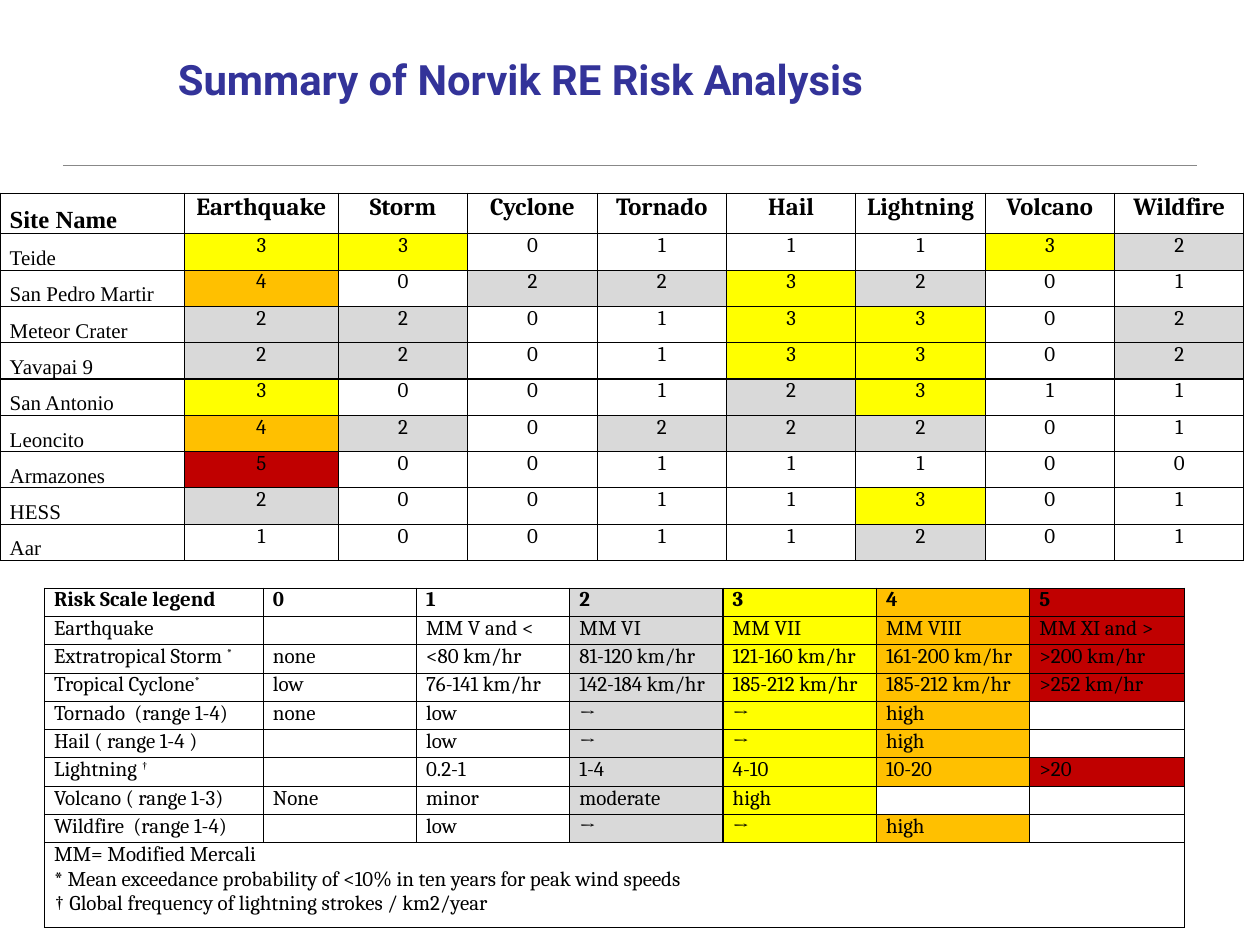
from lxml.etree import SubElement
from pptx import Presentation
from pptx.dml.color import RGBColor
from pptx.enum.shapes import MSO_CONNECTOR
from pptx.enum.text import MSO_ANCHOR, PP_ALIGN
from pptx.oxml.ns import qn
from pptx.util import Inches, Pt

BLACK = RGBColor(0x00, 0x00, 0x00)
NAVY = RGBColor(0x33, 0x33, 0x99)
GRAY = RGBColor(0x88, 0x88, 0x88)
RISK_FILLS = {
    2: RGBColor(0xD9, 0xD9, 0xD9),
    3: RGBColor(0xFF, 0xFF, 0x00),
    4: RGBColor(0xFF, 0xC0, 0x00),
    5: RGBColor(0xC0, 0x00, 0x00),
}

HAZARDS = ["Earthquake", "Storm", "Cyclone", "Tornado", "Hail",
           "Lightning", "Volcano", "Wildfire"]
SITES = {
    "Teide": (3, 3, 0, 1, 1, 1, 3, 2),
    "San Pedro Martir": (4, 0, 2, 2, 3, 2, 0, 1),
    "Meteor Crater": (2, 2, 0, 1, 3, 3, 0, 2),
    "Yavapai 9": (2, 2, 0, 1, 3, 3, 0, 2),
    "San Antonio": (3, 0, 0, 1, 2, 3, 1, 1),
    "Leoncito": (4, 2, 0, 2, 2, 2, 0, 1),
    "Armazones": (5, 0, 0, 1, 1, 1, 0, 0),
    "HESS": (2, 0, 0, 1, 1, 3, 0, 1),
    "Aar": (1, 0, 0, 1, 1, 2, 0, 1),
}
# A caret starts a superscript
LEGEND = [
    ["Risk Scale legend", "0", "1", "2", "3", "4", "5"],
    ["Earthquake", "", "MM V and <", "MM VI", "MM VII", "MM VIII", "MM XI and >"],
    ["Extratropical Storm ^*", "none", "<80 km/hr", "81-120 km/hr",
     "121-160 km/hr", "161-200 km/hr", ">200 km/hr"],
    ["Tropical Cyclone^*", "low", "76-141 km/hr", "142-184 km/hr",
     "185-212 km/hr", "185-212 km/hr", ">252 km/hr"],
    ["Tornado  (range 1-4)", "none", "low", "→", "→", "high", ""],
    ["Hail ( range 1-4 )", "", "low", "→", "→", "high", ""],
    ["Lightning ^†", "", "0.2-1", "1-4", "4-10", "10-20", ">20"],
    ["Volcano ( range 1-3)", "None", "minor", "moderate", "high", "", ""],
    ["Wildfire  (range 1-4)", "", "low", "→", "→", "high", ""],
]
NOTES = [
    "MM= Modified Mercali",
    "* Mean exceedance probability of <10% in ten years for peak wind speeds",
    "† Global frequency of lightning strokes / km2/year",
]


def write(tf, *lines, size=17, font="Cambria", color=BLACK, bold=False,
          align=PP_ALIGN.LEFT):
    for i, line in enumerate(lines):
        p = tf.paragraphs[0] if i == 0 else tf.add_paragraph()
        p.alignment = align
        for raised, text in enumerate(line.split("^")):
            if not text:
                continue
            r = p.add_run()
            r.text = text
            r.font.size, r.font.name, r.font.bold = Pt(size), font, bold
            r.font.color.rgb = color
            if raised:
                r.font._element.set("baseline", "30000")


def format_cell(cell, fill=None):
    cell.margin_left = cell.margin_right = Inches(0.11)
    cell.margin_top = cell.margin_bottom = 0
    tcPr = cell._tc.get_or_add_tcPr()
    for side in ("a:lnL", "a:lnR", "a:lnT", "a:lnB"):
        ln = SubElement(tcPr, qn(side), w=str(Pt(1)))
        SubElement(SubElement(ln, qn("a:solidFill")), qn("a:srgbClr"), val=str(BLACK))
    if fill is None:
        cell.fill.background()
    else:
        cell.fill.solid()
        cell.fill.fore_color.rgb = fill


def add_grid(s, left, top, cols, rows):
    table = s.shapes.add_table(len(rows), len(cols), Inches(left), Inches(top),
                               Inches(sum(cols)), Inches(sum(rows))).table
    table.first_row = table.horz_banding = False
    for column, width in zip(table.columns, cols):
        column.width = Inches(width)
    for row, height in zip(table.rows, rows):
        row.height = Inches(height)
    return table


def add_header(s, left, top, width, height):
    # Title
    sp = s.shapes.title
    sp.left, sp.top, sp.width, sp.height = map(Inches, (left, top, width, height))
    tf = sp.text_frame
    tf.word_wrap = False
    tf.vertical_anchor = MSO_ANCHOR.TOP
    tf.margin_left = tf.margin_right = Inches(0.14)
    tf.margin_top = tf.margin_bottom = Inches(0.07)
    write(tf, "Summary of Norvik RE Risk Analysis", size=34, font="Roboto",
          color=NAVY, bold=True, align=PP_ALIGN.CENTER)
    # Rule below the title
    rule = s.shapes.add_connector(MSO_CONNECTOR.STRAIGHT, Inches(0.71), Inches(1.87),
                                  Inches(13.51), Inches(1.87))
    rule.line.color.rgb = GRAY
    rule.line.width = Pt(1)
    SubElement(rule._element.spPr, qn("a:effectLst"))


def add_site_scores(s, left, top):
    table = add_grid(s, left, top, [2.08, 1.74] + [1.46] * 7,
                     [0.46] + [0.41] * len(SITES))
    rows = [("Site Name", *HAZARDS)]
    rows += [(site, *scores) for site, scores in SITES.items()]
    for i, row in enumerate(rows):
        for j, value in enumerate(row):
            cell = table.cell(i, j)
            format_cell(cell, RISK_FILLS.get(value))
            if j == 0:
                cell.vertical_anchor = MSO_ANCHOR.BOTTOM
            write(cell.text_frame, str(value), size=17 if i else 20, bold=i == 0,
                  font="Cambria" if j else "Times New Roman",
                  align=PP_ALIGN.CENTER if j else PP_ALIGN.LEFT)


def add_legend(s, left, top):
    table = add_grid(s, left, top, [2.47] + [1.73] * 5 + [1.75],
                     [0.32] * len(LEGEND) + [0.95])
    for i, row in enumerate(LEGEND):
        for j, text in enumerate(row):
            cell = table.cell(i, j)
            format_cell(cell, RISK_FILLS.get(j - 1) if text else None)
            write(cell.text_frame, text, bold=i == 0)
    # Notes across the last row
    last = len(LEGEND)
    for j in range(len(table.columns)):
        format_cell(table.cell(last, j))
    notes = table.cell(last, 0)
    notes.merge(table.cell(last, len(table.columns) - 1))
    write(notes.text_frame, *NOTES)


def main():
    prs = Presentation()
    prs.slide_width, prs.slide_height = Inches(14.22), Inches(10.67)
    s = prs.slides.add_slide(prs.slide_layouts[5])
    add_header(s, 1.77, 0.54, 8.21, 0.72)
    add_site_scores(s, 0, 2.18)
    add_legend(s, 0.5, 6.64)
    prs.save("out.pptx")


if __name__ == "__main__":
    main()
